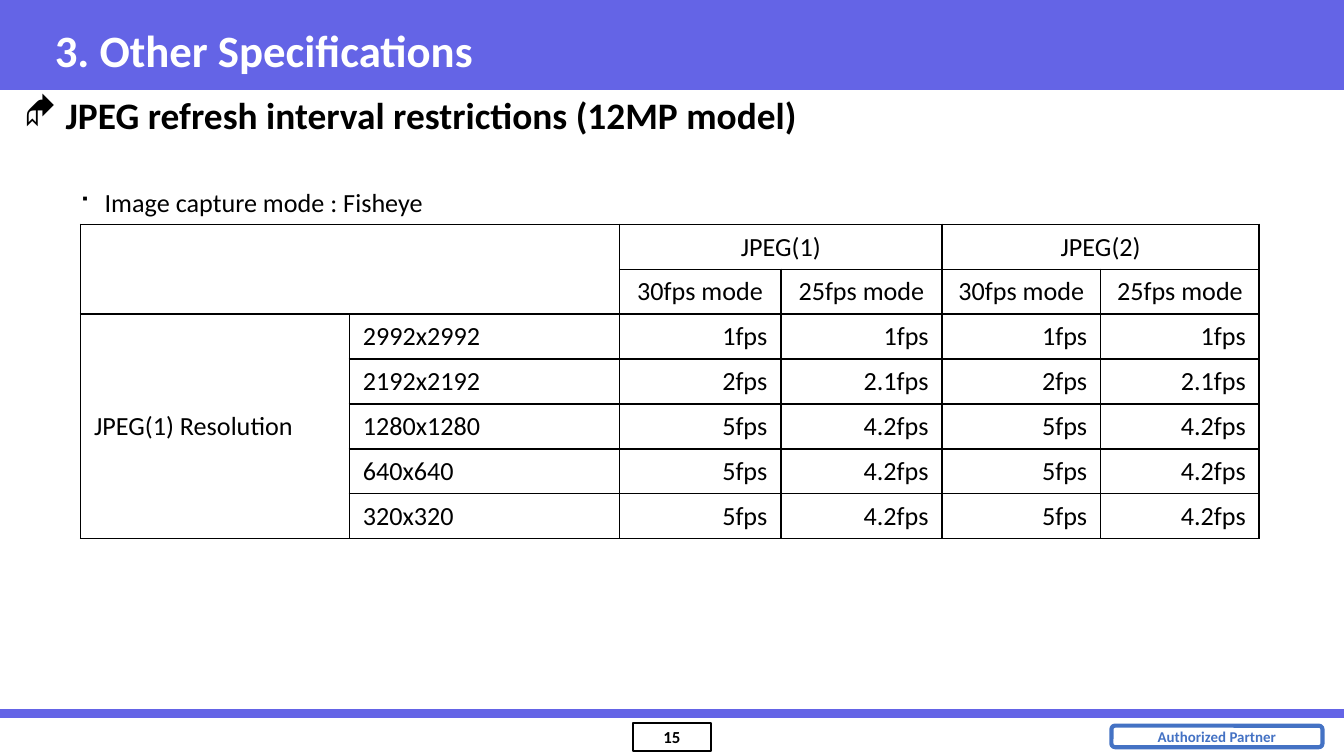
from lxml import etree
from pptx import Presentation
from pptx.dml.color import RGBColor
from pptx.enum import shapes, text
from pptx.oxml import ns
from pptx.util import Inches, Pt

COLORS = {"band": "6464E6", "badge": "4472C4", "ink": "000000", "paper": "FFFFFF"}
FONT = "Calibri"
LEFT, CENTER, RIGHT = text.PP_ALIGN.LEFT, text.PP_ALIGN.CENTER, text.PP_ALIGN.RIGHT
TOP, MIDDLE, BOTTOM = text.MSO_ANCHOR.TOP, text.MSO_ANCHOR.MIDDLE, text.MSO_ANCHOR.BOTTOM

COLS = [2, 2.01, 1.2, 1.2, 1.18, 1.18]
ROW = 0.33
MODES = ["30fps mode", "25fps mode"]
RATES = {
    "2992x2992": ["1fps", "1fps"],
    "2192x2192": ["2fps", "2.1fps"],
    "1280x1280": ["5fps", "4.2fps"],
    "640x640": ["5fps", "4.2fps"],
    "320x320": ["5fps", "4.2fps"],
}


def rgb(name):
    return RGBColor.from_string(COLORS[name])


def write(frame, words, size, color="ink", bold=False, align=LEFT):
    frame.text = words
    para = frame.paragraphs[0]
    para.alignment = align
    font = para.runs[0].font
    font.name, font.size, font.bold = FONT, Pt(size), bold
    font.color.rgb = rgb(color)


def add_box(slide, kind, at, fill=None, line=None, width=1):
    box = slide.shapes.add_shape(kind, *map(Inches, at))
    box.shadow.inherit = False
    if fill:
        box.fill.solid()
        box.fill.fore_color.rgb = rgb(fill)
    else:
        box.fill.background()
    if line:
        box.line.color.rgb = rgb(line)
        box.line.width = Pt(width)
    else:
        box.line.fill.background()
    return box


def add_label(box, words, size, color):
    """Write one centred bold line inside a shape."""
    frame = box.text_frame
    frame.margin_left = frame.margin_right = Inches(0.03)
    frame.margin_top = frame.margin_bottom = Inches(0.03)
    frame.vertical_anchor = MIDDLE
    frame.word_wrap = False
    write(frame, words, size, color, True, CENTER)


def add_rule(slide, y):
    rule = slide.shapes.add_connector(
        shapes.MSO_CONNECTOR.STRAIGHT, 0, Inches(y), Inches(10), Inches(y))
    rule.line.color.rgb = rgb("band")
    rule.line.width = Pt(4.5)
    etree.SubElement(rule._element.spPr, ns.qn("a:effectLst"))


def add_text(slide, at, words, size, color="ink", bold=False, anchor=TOP,
             mark=None, indent=0):
    """Add a text line, with a hanging bullet if a mark is given."""
    frame = slide.shapes.add_textbox(*map(Inches, at)).text_frame
    frame.word_wrap = True
    frame.vertical_anchor = anchor
    write(frame, words, size, color, bold)
    if mark:
        props = frame.paragraphs[0]._p.get_or_add_pPr()
        props.set("marL", str(Inches(indent)))
        props.set("indent", str(-Inches(indent)))
        etree.SubElement(props, ns.qn("a:buFont"), typeface="Wingdings")
        etree.SubElement(props, ns.qn("a:buChar"), char=mark)


def set_border(cell):
    props = cell._tc.get_or_add_tcPr()
    for spot, side in enumerate(["lnL", "lnR", "lnT", "lnB"]):
        line = etree.Element(ns.qn("a:" + side), w=str(Pt(1)))
        fill = etree.SubElement(line, ns.qn("a:solidFill"))
        etree.SubElement(fill, ns.qn("a:srgbClr"), val=COLORS["ink"])
        props.insert(spot, line)


def set_empty(cell, size):
    """Keep an empty cell from growing its row."""
    para = cell.text_frame.paragraphs[0]._p
    etree.SubElement(para, ns.qn("a:endParaRPr"), sz=str(size * 100))


def add_rates(slide, left, top):
    """Add the grid of frame rates by resolution and mode."""
    rows = [["", "", "JPEG(1)", "", "JPEG(2)", ""], ["", ""] + MODES * 2]
    rows += [["", size] + rates * 2 for size, rates in RATES.items()]
    rows[2][0] = "JPEG(1) Resolution"
    grid = slide.shapes.add_table(
        len(rows), len(COLS), Inches(left), Inches(top),
        Inches(sum(COLS)), Inches(ROW * len(rows))).table
    grid.first_row = grid.horz_banding = False
    for col, width in zip(grid.columns, COLS):
        col.width = Inches(width)
    for r, row in enumerate(rows):
        grid.rows[r].height = Inches(ROW)
        for c, words in enumerate(row):
            cell = grid.cell(r, c)
            cell.fill.background()
            set_border(cell)
            cell.vertical_anchor = MIDDLE if r > 1 and c < 2 else TOP
            if words:
                align = LEFT if c < 2 else CENTER if r < 2 else RIGHT
                write(cell.text_frame, words, 14, align=align)
            else:
                set_empty(cell, 14)
    for first, last in [((0, 0), (1, 1)), ((0, 2), (0, 3)),
                        ((0, 4), (0, 5)), ((2, 0), (6, 0))]:
        grid.cell(*first).merge(grid.cell(*last))


def main():
    deck = Presentation()
    deck.slide_width, deck.slide_height = Inches(10), Inches(10 * 9 / 16)
    slide = deck.slides.add_slide(deck.slide_layouts[6])
    kinds = shapes.MSO_SHAPE

    add_box(slide, kinds.RECTANGLE, (0, 0, 10, 0.67), fill="band")
    page = add_box(slide, kinds.RECTANGLE, (4.71, 5.38, 0.58, 0.21), line="ink")
    add_label(page, "15", 9, "ink")
    add_rule(slide, 5.31)
    badge = add_box(slide, kinds.ROUNDED_RECTANGLE, (8.27, 5.4, 1.57, 0.16),
                    line="badge", width=2.25)
    add_label(badge, "Authorized Partner", 8, "badge")

    add_text(slide, (0.31, 0.08, 9.26, 0.58), "3. Other Specifications", 24,
             "paper", True, MIDDLE)
    add_text(slide, (0.49, 1.34, 4.31, 0.34), "Image capture mode : Fisheye", 14,
             mark="■", indent=0.19)
    add_text(slide, (0.08, 0.63, 7.01, 0.44),
             "JPEG refresh interval restrictions (12MP model)", 20,
             bold=True, anchor=BOTTOM, mark="◆", indent=0.31)
    add_rates(slide, 0.6, 1.67)
    deck.save("out.pptx")


if __name__ == "__main__":
    main()
